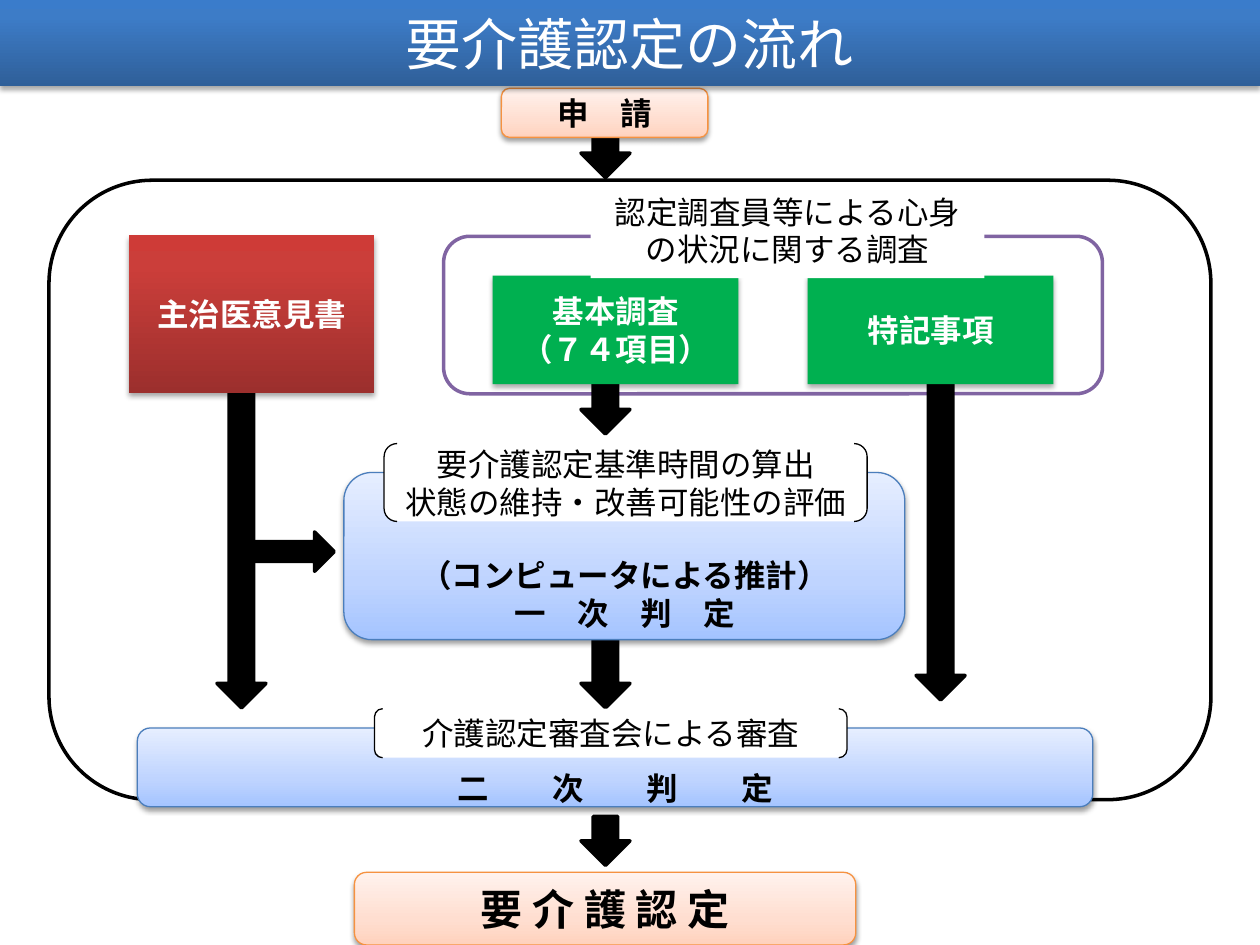
from dataclasses import dataclass

from lxml import etree
from pptx import Presentation
from pptx.dml.color import RGBColor
from pptx.enum import shapes, text
from pptx.oxml import ns
from pptx.util import Pt

KIND = shapes.MSO_SHAPE


@dataclass(frozen=True)
class Style:
    fill: object  # one colour, or gradient stops from bottom to top
    line: str = ""
    weight: float = 0.75
    shadow: tuple = ()  # opacity in percent, distance in points
    ink: str = "000000"
    bold: bool = False


@dataclass(frozen=True)
class Theme:
    font: str = "Noto Sans CJK JP"
    title_font: str = "Calibri"
    body: int = 18
    result: int = 24
    title: int = 32
    banner: Style = Style(((0, "2F5F99"), (80, "3D7CC7"), (100, "3A7CCB")),
                          shadow=(35, 1.8), ink="FFFFFF")
    milestone: Style = Style(((0, "FFD2BD"), (35, "FFDED0"), (100, "FFF2ED")),
                             "F69240", shadow=(38, 1.6), bold=True)
    decision: Style = Style(((0, "A4C4FF"), (35, "BFD4FF"), (100, "E6EEFF")),
                            "4B7EBC", shadow=(38, 1.6), bold=True)
    opinion: Style = Style(((0, "9C2F2D"), (80, "CB3E3A"), (100, "CE3B37")),
                           shadow=(35, 1.8), ink="FFFFFF", bold=True)
    survey: Style = Style("00B050", shadow=(35, 1.8), ink="FFFFFF", bold=True)
    survey_frame: Style = Style("FFFFFF", "8064A2", 2)
    frame: Style = Style("FFFFFF", "000000", 2)
    arrow: Style = Style("000000", "000000", 2)
    bracket: Style = Style("FFFFFF", "000000")
    caption: Style = Style("FFFFFF")


THEME = Theme()


@dataclass(frozen=True)
class Box:
    x: float
    y: float
    w: float
    h: float

    def inner(self, dx, dy, w, h):
        return Box(self.x + dx, self.y + dy, w, h)


# ---- Shared parts ----
def sub(parent, tag, **attrs):
    return etree.SubElement(parent, ns.qn("a:" + tag),
                            {key: str(value) for key, value in attrs.items()})


def paint(shape, style):
    props = shape.element.spPr
    if isinstance(style.fill, str):
        shape.fill.solid()
        shape.fill.fore_color.rgb = RGBColor.from_string(style.fill)
    else:
        shape.fill.gradient()
        gradient = props.find(ns.qn("a:gradFill"))
        gradient.clear()
        stops = sub(gradient, "gsLst")
        for position, color in style.fill:
            sub(sub(stops, "gs", pos=position * 1000), "srgbClr", val=color)
        sub(gradient, "lin", ang=270 * 60000, scaled=0)
    if style.line:
        shape.line.color.rgb = RGBColor.from_string(style.line)
        shape.line.width = Pt(style.weight)
    else:
        shape.line.fill.background()
    shape.shadow.inherit = False
    if style.shadow:
        opacity, distance = style.shadow
        shadow = sub(props.find(ns.qn("a:effectLst")), "outerShdw",
                     blurRad=Pt(3.1), dist=Pt(distance), dir=90 * 60000, rotWithShape=0)
        sub(sub(shadow, "srgbClr", val="000000"), "alpha", val=opacity * 1000)


def write(shape, style, lines, size, font, anchor, top_inset):
    frame = shape.text_frame
    frame.word_wrap = True
    frame.vertical_anchor = anchor
    frame.margin_left = frame.margin_right = Pt(7.2)
    frame.margin_top, frame.margin_bottom = Pt(top_inset), Pt(3.6)
    for index, line in enumerate(lines):
        paragraph = frame.add_paragraph() if index else frame.paragraphs[0]
        paragraph.alignment = text.PP_ALIGN.CENTER
        run = paragraph.add_run()
        run.text = line
        run.font.size = Pt(size)
        run.font.bold = style.bold
        run.font.color.rgb = RGBColor.from_string(style.ink)
        run.font.name = font
        if font == THEME.font:
            sub(run.font._element, "ea", typeface=font)


def part(slide, kind, box, style, *lines, size=THEME.body, font=THEME.font,
         anchor=text.MSO_ANCHOR.MIDDLE, top_inset=3.6):
    shape = slide.shapes.add_shape(kind, Pt(box.x), Pt(box.y), Pt(box.w), Pt(box.h))
    paint(shape, style)
    if lines:
        write(shape, style, lines, size, font, anchor, top_inset)


def down_arrow(slide, box, dx, dy, length):
    part(slide, KIND.DOWN_ARROW, box.inner(dx, dy, 28, length), THEME.arrow)


# ---- Regions ----
def title_banner(slide, box):
    part(slide, KIND.RECTANGLE, box, THEME.banner, "要介護認定の流れ",
         size=THEME.title, font=THEME.title_font)


def application(slide, box):
    down_arrow(slide, box, 45.5, 17, 34)
    part(slide, KIND.ROUNDED_RECTANGLE, box, THEME.milestone, "申　請")


def doctor_opinion(slide, box):
    down_arrow(slide, box, 50.5, box.h, 180)
    part(slide, KIND.RECTANGLE, box, THEME.opinion, "主治医意見書")


def survey(slide, box):
    part(slide, KIND.ROUNDED_RECTANGLE, box, THEME.survey_frame)
    down_arrow(slide, box, 78.5, 79, 34)
    down_arrow(slide, box, 270, 79, 186)
    sections = (("基本調査", "（７４項目）"), ("特記事項",))
    for column, lines in enumerate(sections):
        part(slide, KIND.RECTANGLE, box.inner(28 + 180 * column, 22.5, 140.5, 62),
             THEME.survey, *lines)
    part(slide, KIND.RECTANGLE, box.inner(84, -28.5, 225, 52.5), THEME.caption,
         "認定調査員等による心身の状況に関する調査", anchor=text.MSO_ANCHOR.TOP)


def first_decision(slide, box):
    down_arrow(slide, box, 135.5, 90, 44.5)
    part(slide, KIND.ROUNDED_RECTANGLE, box, THEME.decision,
         "（コンピュータによる推計）", "一　次　判　定", top_inset=46.5)
    part(slide, KIND.DOUBLE_BRACKET, box.inner(23, -16.5, 276, 44.5), THEME.bracket,
         "要介護認定基準時間の算出", "状態の維持・改善可能性の評価")
    # Doctor's opinion feeds in from the left
    part(slide, KIND.RIGHT_ARROW, box.inner(-56, 34, 50.5, 22.5), THEME.arrow)


def second_decision(slide, box):
    part(slide, KIND.ROUNDED_RECTANGLE, box, THEME.decision,
         "二　　次　　判　　定", top_inset=26.5)
    part(slide, KIND.DOUBLE_BRACKET, box.inner(135.5, -11, 270, 28), THEME.bracket,
         "介護認定審査会による審査")
    down_arrow(slide, box, 253.5, 50.5, 28)


def certification(slide, box):
    part(slide, KIND.ROUNDED_RECTANGLE, box, THEME.milestone, "要 介 護 認 定",
         size=THEME.result)


def main():
    deck = Presentation()
    deck.slide_width, deck.slide_height = Pt(720), Pt(540)
    slide = deck.slides.add_slide(deck.slide_layouts[6])
    application(slide, Box(286.5, 50.5, 118, 28))
    part(slide, KIND.ROUNDED_RECTANGLE, Box(28, 103, 664, 354), THEME.frame)
    doctor_opinion(slide, Box(73.5, 134.5, 140.5, 90))
    survey(slide, Box(253.5, 135, 376.5, 90))
    first_decision(slide, Box(196.5, 270, 320.5, 95.5))
    second_decision(slide, Box(78.5, 416, 546, 45))
    certification(slide, Box(202.5, 498.5, 286.5, 41.5))
    title_banner(slide, Box(0, 0, 720, 49))
    deck.save("out.pptx")


if __name__ == "__main__":
    main()
